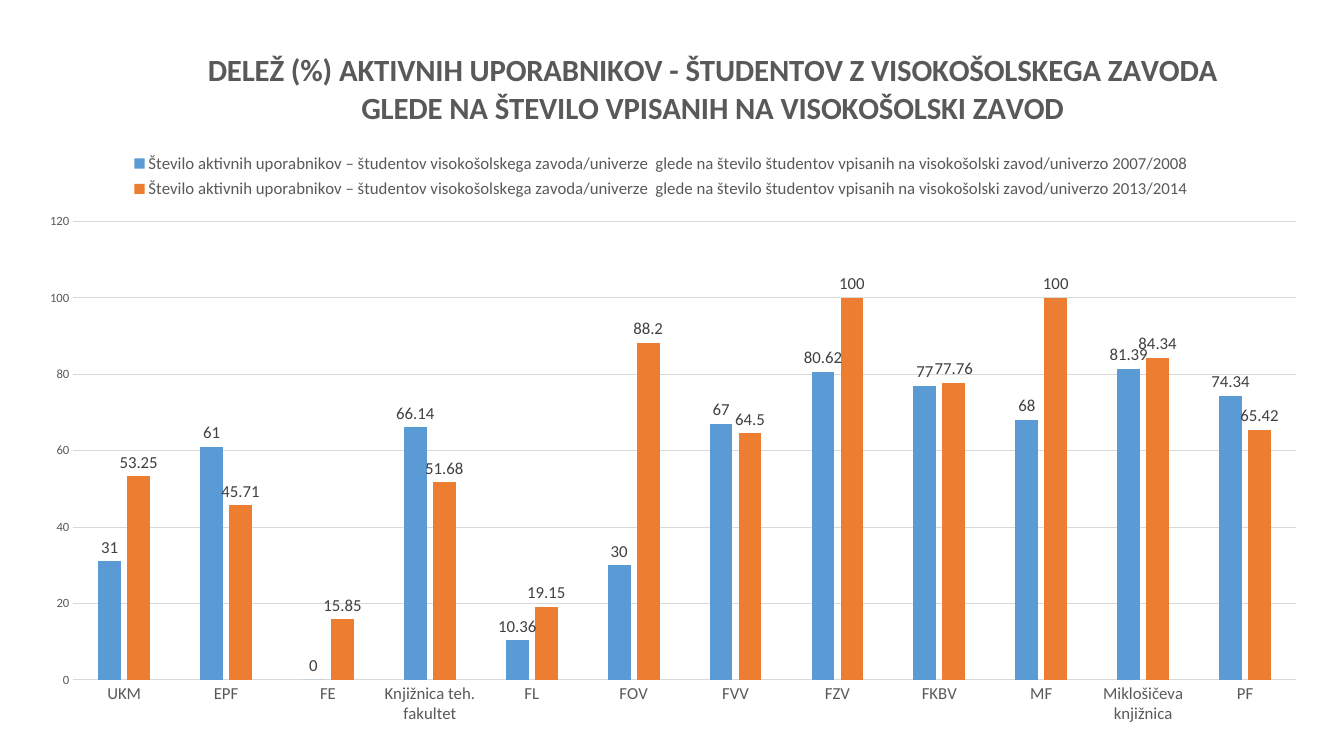
import dataclasses

import lxml.etree
import pptx
import pptx.chart.data
import pptx.dml.color
import pptx.enum.chart
import pptx.oxml.ns
import pptx.util


@dataclasses.dataclass(frozen=True)
class Theme:
    font: str = "Calibri"
    text: str = "595959"
    label: str = "404040"
    rule: str = "D9D9D9"
    series: tuple = ("5B9BD5", "ED7D31")
    title_size: float = 22
    text_size: float = 12
    scale_size: float = 9
    rule_width: float = 0.75


def rgb(value):
    return pptx.dml.color.RGBColor.from_string(value)


def place(parent, left, top, width=None, height=None, inner=False):
    qn = pptx.oxml.ns.qn
    for old in parent.findall(qn("c:layout")):
        parent.remove(old)
    layout = lxml.etree.Element(qn("c:layout"))
    manual = lxml.etree.SubElement(layout, qn("c:manualLayout"))
    settings = [("layoutTarget", "inner")] if inner else []
    settings += [("xMode", "edge"), ("yMode", "edge"), ("x", left), ("y", top)]
    if width is not None:
        settings += [("w", width), ("h", height)]
    for tag, value in settings:
        lxml.etree.SubElement(manual, qn(f"c:{tag}")).set("val", str(value))
    overlay = parent.find(qn("c:overlay"))
    if overlay is None:
        parent.insert(0, layout)
    else:
        overlay.addprevious(layout)


class ChartSlide:
    def __init__(self, presentation, theme):
        self.theme = theme
        self.slide = presentation.slides.add_slide(presentation.slide_layouts[6])

    def style_font(self, font, size, color, bold=False):
        font.name = self.theme.font
        font.size = pptx.util.Pt(size)
        font.bold = bold
        font.color.rgb = rgb(color)

    def style_line(self, line):
        line.color.rgb = rgb(self.theme.rule)
        line.width = pptx.util.Pt(self.theme.rule_width)

    def add_columns(self, box, categories, shares):
        data = pptx.chart.data.CategoryChartData()
        data.categories = categories
        for name, values in shares.items():
            data.add_series(name, values)
        chart = self.slide.shapes.add_chart(
            pptx.enum.chart.XL_CHART_TYPE.COLUMN_CLUSTERED,
            *map(pptx.util.Inches, box), data,
        ).chart
        self.style_font(chart.font, self.theme.text_size, self.theme.text)
        plot = chart.plots[0]
        plot.gap_width = 219
        plot.overlap = -27
        plot.vary_by_categories = False
        for series, color in zip(plot.series, self.theme.series):
            series.format.fill.solid()
            series.format.fill.fore_color.rgb = rgb(color)
            series.invert_if_negative = False
            labels = series.data_labels
            labels.show_value = True
            labels.position = pptx.enum.chart.XL_LABEL_POSITION.OUTSIDE_END
            self.style_font(labels.font, self.theme.text_size, self.theme.label)
        place(chart.plots[0]._element.getparent(), 0.029, 0.265, 0.958, 0.655, inner=True)
        return chart

    def add_title(self, chart, text):
        chart.has_title = True
        run = chart.chart_title.text_frame.paragraphs[0].add_run()
        run.text = text
        self.style_font(run.font, self.theme.title_size, self.theme.text, bold=True)
        chart.chart_title.include_in_layout = False
        place(chart.chart_title._element, 0.13, 0.01)

    def add_legend(self, chart):
        chart.has_legend = True
        legend = chart.legend
        legend.position = pptx.enum.chart.XL_LEGEND_POSITION.BOTTOM
        legend.include_in_layout = False
        self.style_font(legend.font, self.theme.text_size, self.theme.text)
        place(legend._element, 0.07, 0.16, 0.84, 0.08)

    def style_axes(self, chart):
        faculties, percent = chart.category_axis, chart.value_axis
        for axis, size in ((faculties, self.theme.text_size), (percent, self.theme.scale_size)):
            axis.major_tick_mark = pptx.enum.chart.XL_TICK_MARK.NONE
            axis.minor_tick_mark = pptx.enum.chart.XL_TICK_MARK.NONE
            self.style_font(axis.tick_labels.font, size, self.theme.text)
        self.style_line(faculties.format.line)
        percent.format.line.fill.background()
        percent.minimum_scale, percent.maximum_scale, percent.major_unit = 0, 120, 20
        percent.has_major_gridlines = True
        self.style_line(percent.major_gridlines.format.line)


def main():
    presentation = pptx.Presentation()
    presentation.slide_width = pptx.util.Inches(13.33)
    presentation.slide_height = pptx.util.Inches(7.5)
    measure = (
        "Število aktivnih uporabnikov – študentov visokošolskega zavoda/univerze  "
        "glede na število študentov vpisanih na visokošolski zavod/univerzo"
    )
    faculties = [
        "UKM", "EPF", "FE", "Knjižnica teh. fakultet", "FL", "FOV",
        "FVV", "FZV", "FKBV", "MF", "Miklošičeva knjižnica", "PF",
    ]
    shares = {
        f"{measure} 2007/2008":
            [31, 61, 0, 66.14, 10.36, 30, 67, 80.62, 77, 68, 81.39, 74.34],
        f"{measure} 2013/2014":
            [53.25, 45.71, 15.85, 51.68, 19.15, 88.2, 64.5, 100, 77.76, 100, 84.34, 65.42],
    }
    page = ChartSlide(presentation, Theme())
    chart = page.add_columns((0.36, 0.36, 12.66, 6.94), faculties, shares)
    page.add_title(
        chart,
        "DELEŽ (%) AKTIVNIH UPORABNIKOV - ŠTUDENTOV Z VISOKOŠOLSKEGA ZAVODA "
        "GLEDE NA ŠTEVILO VPISANIH NA VISOKOŠOLSKI ZAVOD",
    )
    page.add_legend(chart)
    page.style_axes(chart)
    presentation.save("out.pptx")


if __name__ == "__main__":
    main()
